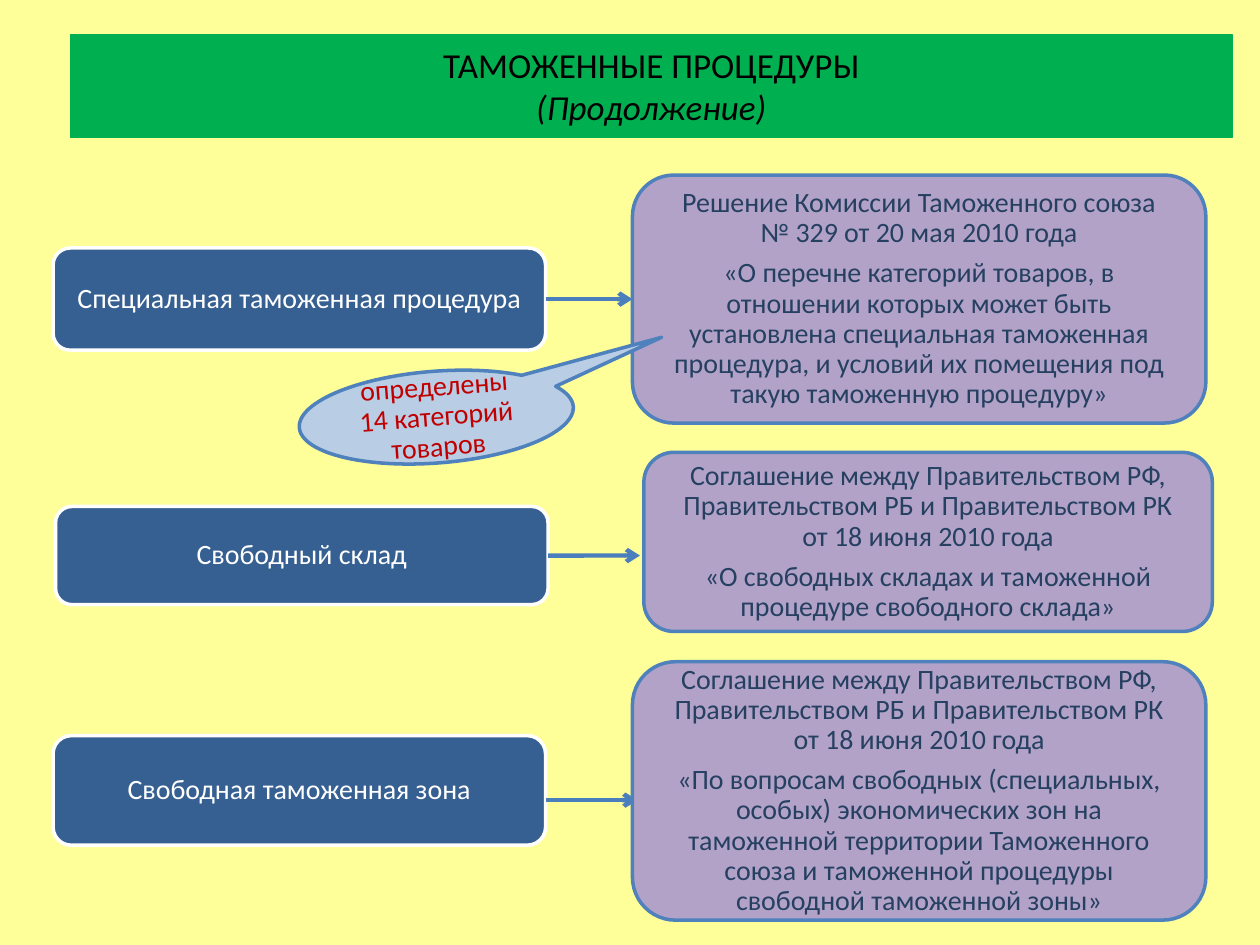
"""Builds the slide of customs procedures with the acts that govern them."""
from dataclasses import dataclass

from lxml import etree
from pptx import Presentation
from pptx import util as u
from pptx.dml.color import RGBColor
from pptx.enum import shapes, text
from pptx.oxml.ns import qn


@dataclass(frozen=True)
class Theme:
    font: str = "Calibri"
    title_size: int = 20
    body_size: int = 16
    background: str = "FFFF99"
    title_fill: str = "00B050"
    title_text: str = "000000"
    procedure_fill: str = "376092"
    procedure_line: str = "FFFFFF"
    procedure_text: str = "FFFFFF"
    act_fill: str = "B3A2C7"
    act_text: str = "254061"
    border: str = "4F81BD"
    arrow: str = "4B7EBC"
    note_fill: str = "B9CDE5"
    note_text: str = "C00000"


def rgb(value):
    return RGBColor.from_string(value)


def write(p, lines, *, font, size, color, italic_last=False, spacing=0.9, after=5.6):
    p.alignment = text.PP_ALIGN.CENTER
    p.line_spacing = spacing
    p.space_after = u.Pt(after)
    p.text = "\v".join(lines)
    for br in p._p.findall(qn("a:br")):
        etree.SubElement(br, qn("a:rPr"), sz=str(size * 100))
    for r in p.runs:
        r.font.name = font
        r.font.size = u.Pt(size)
        r.font.color.rgb = rgb(color)
    if italic_last:
        p.runs[-1].font.italic = True


class Builder:
    def __init__(self, s, theme):
        self.s = s
        self.theme = theme
        s.background.fill.solid()
        s.background.fill.fore_color.rgb = rgb(theme.background)

    def shape(self, kind, box, fill, line, width, paragraphs, inset=0.28, **style):
        sp = self.s.shapes.add_shape(kind, *map(u.Cm, box))
        sp.shadow.inherit = False
        sp.fill.solid()
        sp.fill.fore_color.rgb = rgb(fill)
        sp.line.color.rgb = rgb(line)
        sp.line.width = u.Pt(width)
        tf = sp.text_frame
        tf.word_wrap = True
        tf.vertical_anchor = text.MSO_ANCHOR.MIDDLE
        tf.margin_left = tf.margin_right = tf.margin_top = tf.margin_bottom = u.Cm(inset)
        for i, lines in enumerate(paragraphs):
            p = tf.add_paragraph() if i else tf.paragraphs[0]
            write(p, lines, **{"font": self.theme.font, "size": self.theme.body_size, **style})
        return sp

    def title(self, box, lines):
        t = self.theme
        return self.shape(shapes.MSO_SHAPE.RECTANGLE, box, t.title_fill, t.title_fill, 0.75,
                          [lines], inset=0.13, size=t.title_size, color=t.title_text,
                          italic_last=True, spacing=1.0, after=0)

    def procedure(self, box, name):
        t = self.theme
        return self.shape(shapes.MSO_SHAPE.ROUNDED_RECTANGLE, box, t.procedure_fill,
                          t.procedure_line, 2, [[name]], color=t.procedure_text)

    def act(self, box, paragraphs):
        t = self.theme
        return self.shape(shapes.MSO_SHAPE.ROUNDED_RECTANGLE, box, t.act_fill,
                          t.border, 2, paragraphs, color=t.act_text)

    def note(self, box, lines, rotation, tip):
        t = self.theme
        sp = self.shape(shapes.MSO_SHAPE.OVAL_CALLOUT, box, t.note_fill,
                        t.border, 2, [lines], color=t.note_text)
        sp.rotation = rotation
        sp.adjustments[0], sp.adjustments[1] = tip
        sp.text_frame._txBody.bodyPr.set("vert", "vert270")
        return sp

    def arrow(self, x1, x2, y):
        cx = self.s.shapes.add_connector(shapes.MSO_CONNECTOR.STRAIGHT,
                                         u.Cm(x1), u.Cm(y), u.Cm(x2), u.Cm(y))
        cx.line.color.rgb = rgb(self.theme.arrow)
        cx.line.width = u.Pt(2.5)
        etree.SubElement(cx.line._get_or_add_ln(), qn("a:tailEnd"), type="arrow")
        etree.SubElement(cx._element.spPr, qn("a:effectLst"))
        return cx


def main():
    prs = Presentation()
    prs.slide_width, prs.slide_height = u.Cm(25.4), u.Cm(19.05)
    b = Builder(prs.slides.add_slide(prs.slide_layouts[6]), Theme())
    b.title((1.42, 0.69, 23.42, 2.08), ["ТАМОЖЕННЫЕ ПРОЦЕДУРЫ", "(Продолжение)"])

    special = b.procedure((1.07, 5, 9.93, 2.06), "Специальная таможенная процедура")
    warehouse = b.procedure((1.12, 10.21, 9.93, 1.98), "Свободный склад")
    b.procedure((1.07, 14.83, 9.93, 2.21), "Свободная таможенная зона")

    to_special = b.arrow(11, 12.75, 6.03)
    b.arrow(11.05, 12.9, 11.2).begin_connect(warehouse, 3)
    b.arrow(11, 12.85, 16.13)

    agreement = ["Соглашение между Правительством РФ, Правительством РБ и Правительством РК",
                 "от 18 июня 2010 года"]
    decision = b.act((12.75, 3.53, 11.56, 5), [
        ["Решение Комиссии Таможенного союза", "№ 329 от 20 мая 2010 года"],
        ["«О перечне категорий товаров, в отношении которых может быть установлена "
         "специальная таможенная процедура, и условий их помещения под такую "
         "таможенную процедуру»"]])
    b.act((12.98, 9.12, 11.46, 3.61), [
        agreement, ["«О свободных складах и таможенной процедуре свободного склада»"]])
    b.act((12.75, 13.34, 11.56, 5.21), [
        agreement,
        ["«По вопросам свободных (специальных, особых) экономических зон на таможенной "
         "территории Таможенного союза и таможенной процедуры свободной таможенной зоны»"]])

    to_special.begin_connect(special, 3)
    to_special.end_connect(decision, 1)
    b.note((7.87, 5.64, 1.85, 5.54), ["определены", "14 категорий", "товаров"],
           rotation=85.6, tip=(-0.68, -0.84))
    prs.save("out.pptx")


if __name__ == "__main__":
    main()
